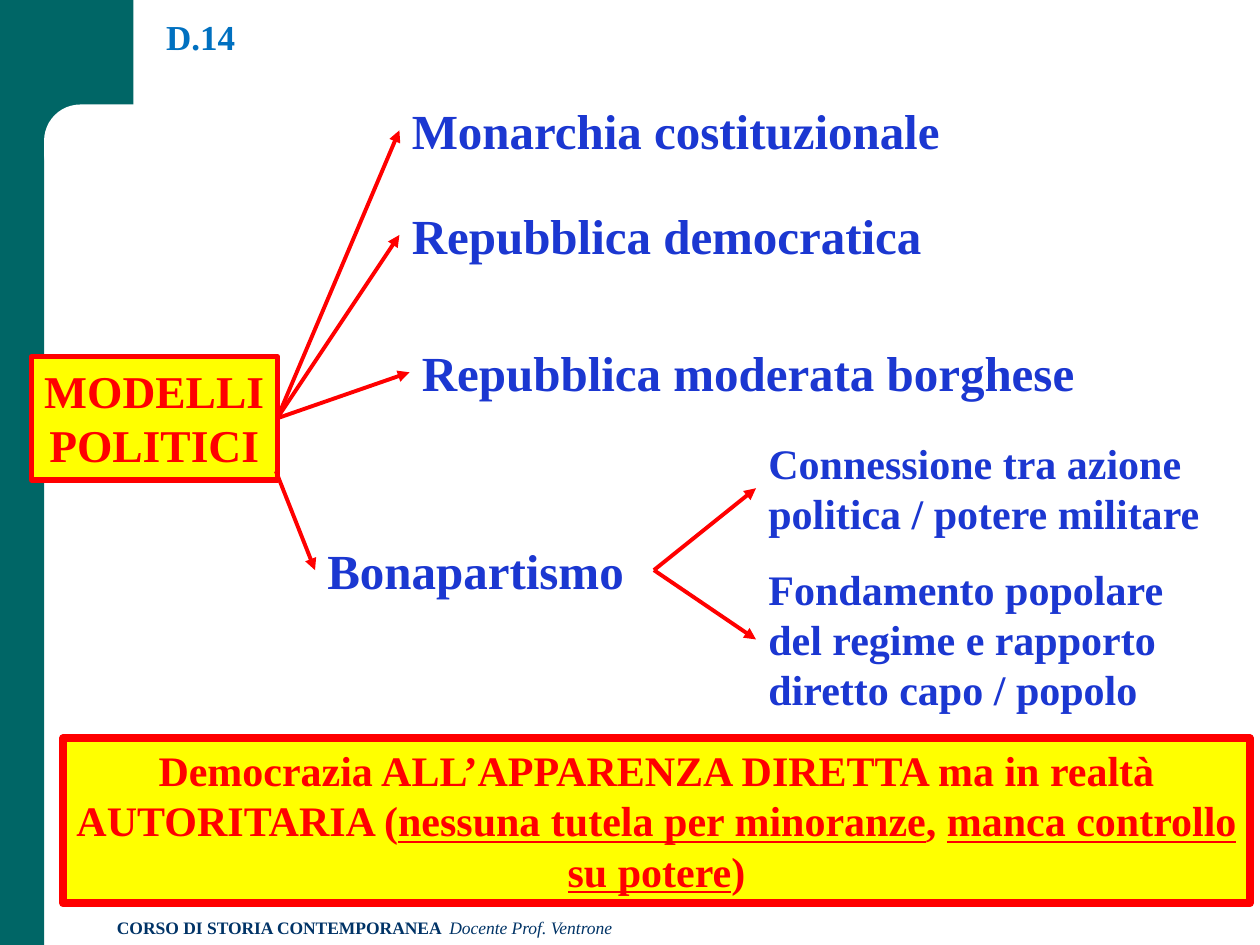
from dataclasses import dataclass

from lxml import etree
from pptx import Presentation
from pptx.dml.color import RGBColor
from pptx.enum.shapes import MSO_CONNECTOR, MSO_SHAPE
from pptx.enum.text import MSO_ANCHOR, PP_ALIGN
from pptx.oxml.ns import qn
from pptx.util import Inches, Pt

RECT, ROUND = MSO_SHAPE.RECTANGLE, MSO_SHAPE.ROUNDED_RECTANGLE
STRAIGHT = MSO_CONNECTOR.STRAIGHT
LEFT, CENTER = PP_ALIGN.LEFT, PP_ALIGN.CENTER
TOP, BOTTOM = MSO_ANCHOR.TOP, MSO_ANCHOR.BOTTOM


@dataclass(frozen=True)
class Theme:
    font: str = "Times New Roman"
    white: str = "FFFFFF"
    teal: str = "006666"
    navy: str = "003366"
    title: str = "0070C0"
    blue: str = "1B37D1"
    red: str = "FF0000"
    yellow: str = "FFFF00"
    footer_size: int = 10
    title_size: int = 20
    detail_size: int = 24
    root_size: int = 26
    model_size: int = 28
    arrow_width: float = 2.25


THEME = Theme()


def rgb(value):
    return RGBColor.from_string(value)


def write(sp, runs, size, color, align=LEFT, anchor=TOP):
    """Fill a shape with one paragraph of (text, style) runs."""
    tf = sp.text_frame
    tf.word_wrap = True
    tf.vertical_anchor = anchor
    p = tf.paragraphs[0]
    p.alignment = align
    for text, style in runs:
        r = p.add_run()
        r.text = text
        r.font.name = THEME.font
        r.font.size = Pt(size)
        r.font.color.rgb = rgb(color)
        r.font.bold = style != "italic"
        r.font.italic = style == "italic"
        r.font.underline = style == "underline"
    return p


def add_text(slide, box, runs, size, color, **layout):
    sp = slide.shapes.add_textbox(*map(Inches, box))
    return write(sp, runs, size, color, **layout)


def add_block(slide, box, fill, kind=RECT, border=None):
    sp = slide.shapes.add_shape(kind, *map(Inches, box))
    sp.shadow.inherit = False
    sp.fill.solid()
    sp.fill.fore_color.rgb = rgb(fill)
    if border:
        sp.line.color.rgb = rgb(THEME.red)
        sp.line.width = Pt(border)
    else:
        sp.line.fill.background()
    return sp


def add_arrow(slide, start, end):
    line = slide.shapes.add_connector(STRAIGHT, *map(Inches, (*start, *end)))
    line.line.color.rgb = rgb(THEME.red)
    line.line.width = Pt(THEME.arrow_width)
    ln = line.line._get_or_add_ln()
    etree.SubElement(ln, qn("a:tailEnd"), type="triangle")
    etree.SubElement(line._element.spPr, qn("a:effectLst"))


def add_frame(slide, box):
    """Teal side band with a rounded inner corner, and the footer."""
    x, y, w, h = box
    band, corner_w, corner_h = 0.35, 1.06, 1.17
    add_block(slide, (x, y, band, h), THEME.teal)
    add_block(slide, (x, y, corner_w, corner_h), THEME.teal)
    cover = add_block(slide, (x + band, y + 0.83, 6.06, 0.67), THEME.white, ROUND)
    cover.adjustments[0] = 0.43
    add_text(slide, (x + 0.83, y + h - 0.27, 6.17, 0.27),
             [("CORSO DI STORIA CONTEMPORANEA  ", "bold"),
              ("Docente Prof. Ventrone", "italic")],
             THEME.footer_size, THEME.navy)


def add_title(slide, box):
    p = add_text(slide, box, [("D.14", "bold")], THEME.title_size,
                 THEME.title, anchor=BOTTOM)
    p.line_spacing = 0.9


def add_callout(slide, box, runs, size, border):
    sp = add_block(slide, box, THEME.yellow, border=border)
    write(sp, runs, size, THEME.red, align=CENTER)


def add_branch(slide, start, box, text, size):
    """Label with an arrow reaching the middle of its left side."""
    x, y, _, h = box
    add_text(slide, box, [(text, "bold")], size, THEME.blue)
    add_arrow(slide, start, (x, y + h / 2))


def add_models(slide, box):
    """Root box, the four political models and the Bonapartism details."""
    x, y, w, h = box
    add_callout(slide, box, [("MODELLI POLITICI", "bold")], THEME.root_size, 3)
    hub, low_hub = (x + w, y + h / 2), (x + w - 0.01, y + 0.91)
    label_h = 0.57
    models = [
        (hub, 3.17, 0.75, 4.67, "Monarchia costituzionale"),
        (hub, 3.17, 1.58, 5.14, "Repubblica democratica"),
        (hub, 3.25, 2.67, 5.77, "Repubblica moderata borghese"),
        (low_hub, 2.5, 4.24, 2.69, "Bonapartismo"),
    ]
    for start, left, top, width, text in models:
        add_branch(slide, start, (left, top, width, label_h), text,
                   THEME.model_size)

    # Details fork from the right side of the last model
    fork = (left + width, top + label_h / 2)
    details = [
        ((6, 3.42, 3.67, 0.91),
         "Connessione tra azione politica / potere militare"),
        ((6, 4.42, 3.58, 1.31),
         "Fondamento popolare del regime e rapporto diretto capo / popolo"),
    ]
    for detail_box, text in details:
        add_branch(slide, fork, detail_box, text, THEME.detail_size)


def add_conclusion(slide, box):
    runs = [
        ("Democrazia ALL’APPARENZA DIRETTA ma in realtà AUTORITARIA (", "bold"),
        ("nessuna tutela per minoranze", "underline"),
        (", ", "bold"),
        ("manca controllo su potere", "underline"),
        (")", "bold"),
    ]
    add_callout(slide, box, runs, THEME.detail_size, 4.5)


def main():
    prs = Presentation()
    prs.slide_width, prs.slide_height = Inches(10), Inches(7.5)
    slide = prs.slides.add_slide(prs.slide_layouts[6])
    add_frame(slide, (0, 0, 10, 7.5))
    add_title(slide, (1.22, 0, 0.97, 0.51))
    add_models(slide, (0.25, 2.83, 1.95, 0.98))
    add_conclusion(slide, (0.5, 5.86, 9.42, 1.31))
    prs.save("out.pptx")


if __name__ == "__main__":
    main()
